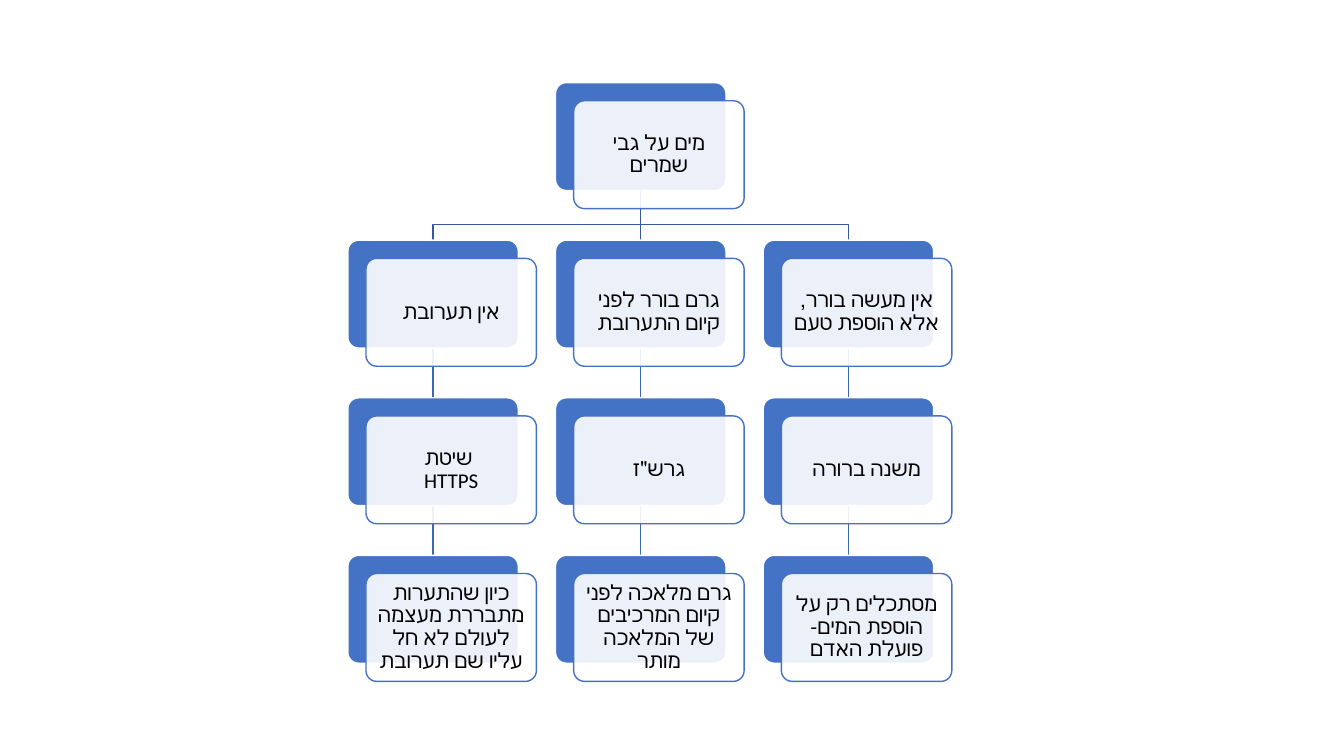
import pptx
import pptx.util
import pptx.dml.color
import pptx.enum.shapes
import pptx.enum.text
import pptx.oxml
import pptx.oxml.ns

Inches = pptx.util.Inches
Pt = pptx.util.Pt
RGB = pptx.dml.color.RGBColor
Kind = pptx.enum.shapes.MSO_SHAPE
BLUE = RGB(0x44, 0x72, 0xC4)
STEEL = RGB(0x3E, 0x67, 0xB2)
NAVY = RGB(0x36, 0x5B, 0x9D)
WHITE = RGB(0xFF, 0xFF, 0xFF)
BLACK = RGB(0, 0, 0)

LEFT, TOP = 3.45, 0.82
STEP_X, STEP_Y = 2.06, (5.51 - 0.82) / 3
WIDE, HIGH = 1.69, 1.07
SHIFT = 0.18
BEND = 0.34

ROOT = "מים על גבי שמרים"
COLUMNS = [
    ["אין תערובת", "שיטת \vHTTPS",
     "כיון שהתערות מתבררת מעצמה לעולם לא חל עליו שם תערובת"],
    ["גרם בורר לפני קיום התערובת", "גרש\"ז",
     "גרם מלאכה לפני קיום המרכיבים של המלאכה מותר"],
    ["אין מעשה בורר, אלא הוספת טעם", "משנה ברורה",
     "מסתכלים רק על הוספת המים- פועלת האדם"],
]


class Chart:
    FRAME = {
        "word_wrap": True,
        "vertical_anchor": pptx.enum.text.MSO_ANCHOR.MIDDLE,
        "margin_left": Inches(0.06),
        "margin_right": Inches(0.06),
        "margin_top": Inches(0.06),
        "margin_bottom": Inches(0.06),
    }
    PARA = {"alignment": pptx.enum.text.PP_ALIGN.CENTER, "line_spacing": 0.9}
    FONT = {"name": "Calibri", "size": Pt(15)}

    def __init__(self, slide):
        self.slide = slide
        self.shapes = slide.shapes
        self.depth = 2

    def apply(self, target, style):
        for name, value in style.items():
            setattr(target, name, value)

    def stroke(self, shape, color):
        shape.line.color.rgb = color
        shape.line.width = Pt(1)

    def lower(self, shape):
        self.shapes.element.insert(self.depth, shape.element)
        self.depth += 1

    def panel(self, x, y, fill, line):
        shape = self.shapes.add_shape(
            Kind.ROUNDED_RECTANGLE,
            Inches(x), Inches(y), Inches(WIDE), Inches(HIGH))
        shape.adjustments[0] = 0.1
        shape.shadow.inherit = False
        shape.fill.solid()
        shape.fill.fore_color.rgb = fill
        self.stroke(shape, line)
        return shape

    def node(self, col, row, text):
        x, y = LEFT + col * STEP_X, TOP + row * STEP_Y
        back = self.panel(x, y, BLUE, WHITE)
        front = self.panel(x + SHIFT, y + SHIFT, WHITE, BLUE)
        color = front.element.spPr.find(
            pptx.oxml.ns.qn("a:solidFill"))[0]
        color.append(pptx.oxml.parse_xml(
            f'<a:alpha {pptx.oxml.ns.nsdecls("a")} val="90000"/>'))
        frame = front.text_frame
        self.apply(frame, self.FRAME)
        para = frame.paragraphs[0]
        para.text = text
        self.apply(para, self.PARA)
        for run in para.runs:
            self.apply(run.font, self.FONT)
            run.font.color.rgb = BLACK
        return back

    def link(self, upper, under, color):
        line = self.shapes.add_connector(
            pptx.enum.shapes.MSO_CONNECTOR.STRAIGHT, 0, 0, 0, 0)
        line.begin_connect(upper, 2)
        line.end_connect(under, 0)
        self.stroke(line, color)
        line.element.spPr.append(pptx.oxml.parse_xml(
            f'<a:effectLst {pptx.oxml.ns.nsdecls("a")}/>'))
        self.lower(line)

    def elbow(self, upper, under, color):
        start = upper.left + upper.width // 2
        stop = under.left + under.width // 2
        head = upper.top + upper.height
        turn = head + Inches(BEND)
        pen = self.shapes.build_freeform(start, head)
        pen.add_line_segments(
            [(start, turn), (stop, turn), (stop, under.top)], close=False)
        line = pen.convert_to_shape()
        line.shadow.inherit = False
        line.fill.background()
        self.stroke(line, color)
        self.lower(line)


def main():
    deck = pptx.Presentation()
    deck.slide_width = Inches(13.33)
    deck.slide_height = Inches(7.5)
    chart = Chart(deck.slides.add_slide(deck.slide_layouts[6]))
    root = chart.node(1, 0, ROOT)
    for col, texts in enumerate(COLUMNS):
        nodes = [chart.node(col, row, text)
                 for row, text in enumerate(texts, 1)]
        join = chart.link if col == 1 else chart.elbow
        join(root, nodes[0], NAVY)
        for upper, under in zip(nodes, nodes[1:]):
            chart.link(upper, under, STEEL)
    deck.save("out.pptx")


if __name__ == "__main__":
    main()
